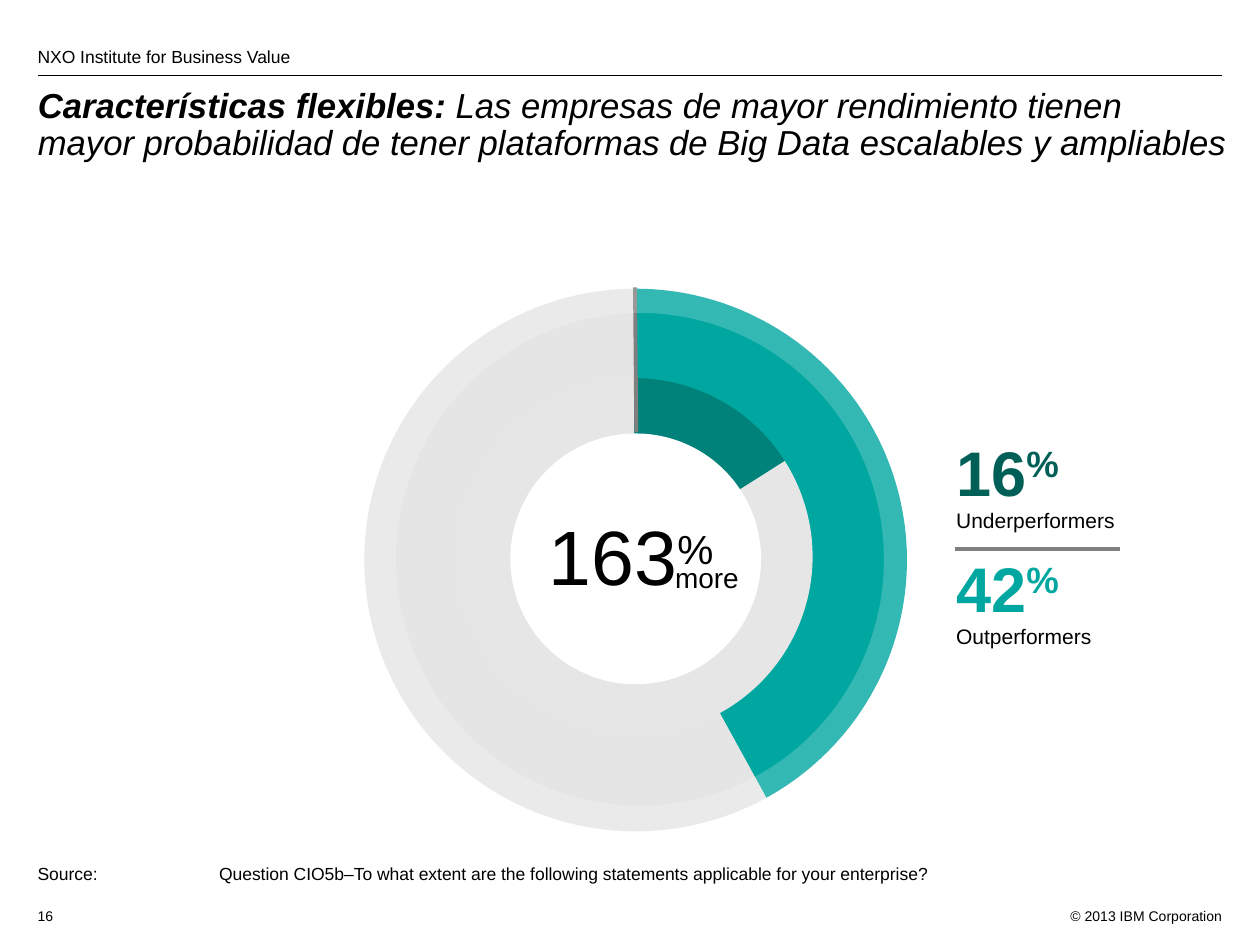
from dataclasses import dataclass

import pptx
import pptx.chart.data
import pptx.dml.color
import pptx.enum.chart
import pptx.enum.shapes
import pptx.enum.text
import pptx.oxml
import pptx.oxml.ns
import pptx.util
from pptx.util import Inches

qn = pptx.oxml.ns.qn
Align = pptx.enum.text.PP_ALIGN
Anchor = pptx.enum.text.MSO_ANCHOR
Shape = pptx.enum.shapes.MSO_SHAPE


@dataclass(frozen=True)
class Theme:
    font: str = "Arial"
    black: str = "000000"
    white: str = "FFFFFF"
    rule: str = "7F7F7F"
    teal: str = "00A7A0"
    teal_mid: str = "00827B"
    teal_dark: str = "006057"
    rest_outer: str = "E5E5E5"
    rest_inner: str = "E6E6E6"
    footer: float = 8
    note: float = 10
    label: float = 12
    more: float = 16
    chart: float = 18
    title: float = 19.8
    figure: float = 36
    big_sign: float = 40
    big: float = 44


T = Theme()


def rgb(value):
    return pptx.dml.color.RGBColor.from_string(value)


def add_text(p, text, size=T.label, color=T.black, bold=False, italic=False, raised=False):
    r = p.add_run()
    r.text = text
    f = r.font
    f.name, f.size, f.bold, f.italic = T.font, pptx.util.Pt(size), bold, italic
    f.color.rgb = rgb(color)
    if raised:
        r._r.get_or_add_rPr().set("baseline", "30000")
    return r


def set_frame(tf, inset=0.05, anchor=Anchor.TOP):
    tf.word_wrap = True
    tf.auto_size = pptx.enum.text.MSO_AUTO_SIZE.NONE
    tf.vertical_anchor = anchor
    tf.margin_left = tf.margin_right = Inches(0.1)
    tf.margin_top = tf.margin_bottom = Inches(inset)


def add_box(s, x, y, w, h, align=Align.LEFT, spacing=1.0, **frame):
    """Add a text box and return its first paragraph and its text frame."""
    tf = s.shapes.add_textbox(Inches(x), Inches(y), Inches(w), Inches(h)).text_frame
    set_frame(tf, **frame)
    p = tf.paragraphs[0]
    p.alignment, p.line_spacing = align, spacing
    return p, tf


def add_line(s, x1, y1, x2, y2, color, width):
    line = s.shapes.add_connector(pptx.enum.shapes.MSO_CONNECTOR.STRAIGHT,
                                  Inches(x1), Inches(y1), Inches(x2), Inches(y2))
    line.line.color.rgb = rgb(color)
    line.line.width = pptx.util.Pt(width)
    line._element.spPr.append(pptx.oxml.parse_xml(
        f'<a:effectLst {pptx.oxml.ns.nsdecls("a")}/>'))


def add_white_shape(s, kind, x, y, w, h):
    sp = s.shapes.add_shape(kind, Inches(x), Inches(y), Inches(w), Inches(h))
    sp.shadow.inherit = False
    sp.fill.solid()
    sp.fill.fore_color.rgb = rgb(T.white)
    sp.line.fill.background()
    return sp


def add_ring(s, x, y, w, h, share, colors):
    """Add a doughnut chart of a share and the rest of 100."""
    data = pptx.chart.data.CategoryChartData()
    data.categories = [str(n) for n in range(1, 10)]
    data.add_series("Series 1", [share, 100 - share] + [None] * 7)
    chart = s.shapes.add_chart(pptx.enum.chart.XL_CHART_TYPE.DOUGHNUT, Inches(x), Inches(y),
                               Inches(w), Inches(h), data).chart
    chart.has_legend = chart.has_title = False
    chart.font.name, chart.font.size = T.font, pptx.util.Pt(T.chart)
    chart.font.color.rgb = rgb(T.black)
    plot = chart.plots[0]
    plot.vary_by_categories = True
    for i, color in enumerate(colors):
        fmt = plot.series[0].points[i].format
        fmt.fill.solid()
        fmt.fill.fore_color.rgb = rgb(color)
        fmt.line.fill.background()

    ns = pptx.oxml.ns.nsdecls("c", "a")
    c_chart = chart._chartSpace.find(qn("c:chart"))
    c_chart.addnext(pptx.oxml.parse_xml(
        f"<c:spPr {ns}><a:noFill/><a:ln><a:noFill/></a:ln></c:spPr>"))
    area = c_chart.find(qn("c:plotArea"))
    for old in area.findall(qn("c:layout")):
        area.remove(old)
    area.insert(0, pptx.oxml.parse_xml(
        f'<c:layout {ns}><c:manualLayout><c:layoutTarget val="inner"/>'
        '<c:xMode val="edge"/><c:yMode val="edge"/><c:x val="0.194"/><c:y val="0"/>'
        '<c:w val="0.673"/><c:h val="0.933"/></c:manualLayout></c:layout>'))


def add_header(s):
    p, _ = add_box(s, 0.2, 0.33, 8.65, 0.2, inset=0, anchor=Anchor.BOTTOM)
    p.space_after = pptx.util.Pt(9)
    add_text(p, "NXO Institute for Business Value", T.note)
    add_line(s, 0.3, 0.6, 9.7, 0.6, T.black, 0.75)

    title = s.shapes.title
    title.left, title.top, title.width, title.height = map(Inches, (0.2, 0.65, 9.65, 0.81))
    set_frame(title.text_frame)
    p = title.text_frame.paragraphs[0]
    p.alignment, p.line_spacing = Align.LEFT, 0.9
    add_text(p, "Características flexibles: ", T.title, bold=True, italic=True)
    add_text(p, "Las empresas de mayor rendimiento tienen", T.title, italic=True)
    p.add_line_break()
    add_text(p, "mayor probabilidad de tener plataformas de Big Data escalables y ampliables",
             T.title, italic=True)


def add_footer(s):
    p, _ = add_box(s, 8.3, 7.15, 1.5, 0.2, align=Align.RIGHT)
    add_text(p, "© 2013 IBM Corporation", T.footer)
    p, _ = add_box(s, 0.2, 7.15, 0.4, 0.2)
    add_text(p, "16", T.footer)
    p, _ = add_box(s, 0.2, 6.8, 9.45, 0.27)
    pPr = p._p.get_or_add_pPr()
    for name, length in (("marL", 0.44), ("indent", -0.44), ("defTabSz", 1)):
        pPr.set(name, str(Inches(length)))
    add_text(p, "Source:\tQuestion CIO5b–To what extent are the following statements "
                "applicable for your enterprise?", T.note)


def add_key(s):
    p, tf = add_box(s, 7.49, 3.46, 1.65, 1.77, spacing=0.9)
    groups = (("16", "Underperformers", T.teal_dark), ("42", "Outperformers", T.teal))
    for i, (figure, label, color) in enumerate(groups):
        if i:
            p = tf.add_paragraph()
            p.line_spacing, p.space_before = 0.9, pptx.util.Pt(14.5)
        add_text(p, figure, T.figure, color, bold=True)
        add_text(p, "%", T.figure, color, bold=True, raised=True)
        p = tf.add_paragraph()
        p.line_spacing = 0.9
        add_text(p, label)
    add_line(s, 7.58, 4.36, 8.89, 4.36, T.rule, 2.25)


def add_rings(s):
    add_ring(s, 1.65, 2.29, 6.4, 4.62, 42, (T.teal, T.rest_outer))
    add_ring(s, 2.8, 3, 4.21, 3.04, 16, (T.teal_mid, T.rest_inner))
    add_line(s, 5.04, 2.28, 5.05, 3.43, T.rule, 2.25)
    add_white_shape(s, Shape.OVAL, 4.05, 3.44, 1.99, 1.99)
    p, _ = add_box(s, 2.88, 4.07, 4.26, 0.78, align=Align.CENTER, spacing=0.9)
    add_text(p, "163", T.big)
    add_text(p, "%", T.big_sign, raised=True)
    p, _ = add_box(s, 5.26, 4.43, 0.79, 0.35, spacing=0.9)
    add_text(p, "more", T.more)

    rim = add_white_shape(s, Shape.DONUT, 2.66, 2, 4.84, 4.88)
    rim.adjustments[0] = 0.1
    color = rim._element.spPr.find(qn("a:solidFill"))[0]
    color.append(pptx.oxml.parse_xml(
        f'<a:alpha {pptx.oxml.ns.nsdecls("a")} val="20000"/>'))


def main():
    prs = pptx.Presentation()
    prs.slide_width, prs.slide_height = Inches(10), Inches(7.5)
    s = prs.slides.add_slide(prs.slide_layouts[5])
    add_header(s)
    add_footer(s)
    add_key(s)
    add_rings(s)
    prs.save("out.pptx")


if __name__ == "__main__":
    main()
